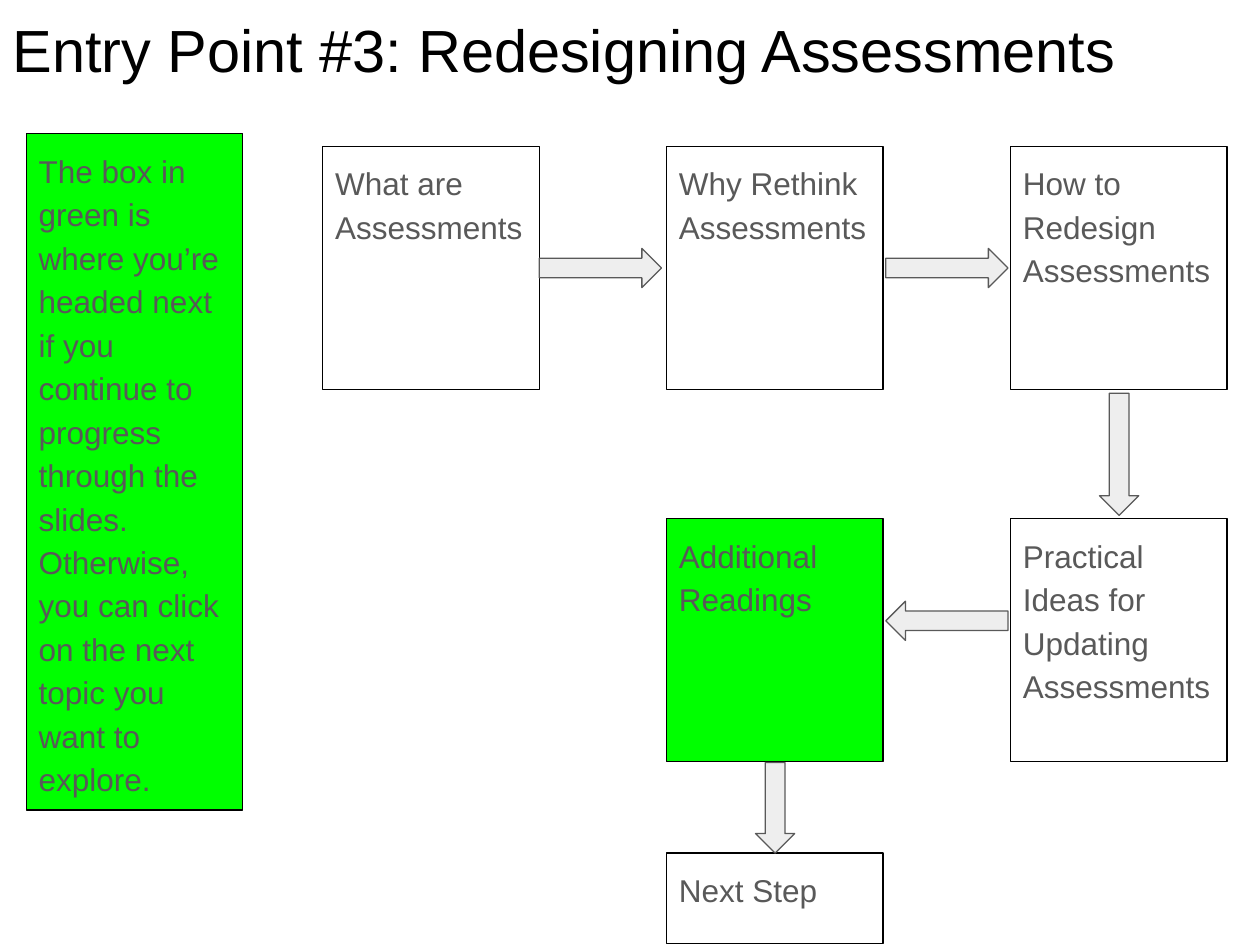
import pptx
import pptx.util
import pptx.dml.color
import pptx.enum.shapes
import pptx.enum.text

Pt = pptx.util.Pt
SHAPE = pptx.enum.shapes.MSO_SHAPE
COLORS = {"title": "000000", "border": "000000", "text": "595959",
          "next": "00FF00", "arrow": "EEEEEE", "arrow_edge": "595959"}

deck = pptx.Presentation()
deck.slide_width, deck.slide_height = Pt(720), Pt(540)
slide = deck.slides.add_slide(deck.slide_layouts[6])


def add_block(kind, left, top, width, height, fill, edge):
    block = slide.shapes.add_shape(kind, Pt(left), Pt(top), Pt(width), Pt(height))
    block.shadow.inherit = False
    if fill:
        block.fill.solid()
        block.fill.fore_color.rgb = pptx.dml.color.RGBColor.from_string(COLORS[fill])
    else:
        block.fill.background()
    block.line.color.rgb = pptx.dml.color.RGBColor.from_string(COLORS[edge])
    block.line.width = Pt(0.75)
    return block


def write(holder, text, size, color):
    frame = holder.text_frame
    frame.text = text
    frame.word_wrap = True
    frame.vertical_anchor = pptx.enum.text.MSO_ANCHOR.TOP
    frame.margin_left = frame.margin_right = Pt(7.2)
    frame.margin_top = frame.margin_bottom = Pt(7.2)
    paragraph = frame.paragraphs[0]
    paragraph.alignment = pptx.enum.text.PP_ALIGN.LEFT
    font = paragraph.runs[0].font
    font.name, font.size = "Arial", Pt(size)
    font.color.rgb = pptx.dml.color.RGBColor.from_string(COLORS[color])
    return paragraph


# Title
title = slide.shapes.add_textbox(Pt(0), Pt(0), Pt(702), Pt(55.4))
write(title, "Entry Point #3: Redesigning Assessments", 34, "title")

# Topic boxes on a three-column grid, with the green note at the left
box_width, box_height = 123.8, 139
columns = [184.4 + 196.5 * i for i in range(3)]
top_row, lower_row, last_row = 83.6, 296.4, 487.4
boxes = [
    ("What are Assessments", columns[0], top_row, box_height, None),
    ("Why Rethink Assessments", columns[1], top_row, box_height, None),
    ("How to Redesign Assessments", columns[2], top_row, box_height, None),
    ("Practical Ideas for Updating Assessments", columns[2], lower_row, box_height, None),
    ("Additional Readings", columns[1], lower_row, box_height, "next"),
    ("Next Step", columns[1], last_row, 51.8, None),
    ("The box in green is where you’re headed next if you continue to progress "
     "through the slides. Otherwise, you can click on the next topic you want to explore.",
     15, 76.4, 386.6, "next"),
]
for text, left, top, height, fill in boxes:
    box = add_block(SHAPE.RECTANGLE, left, top, box_width, height, fill, "border")
    paragraph = write(box, text, 18, "text")
    paragraph.line_spacing = 1.15
    paragraph.space_after = Pt(12)

# Arrows along the path; the downward ones are turned right arrows
arrow_height = 22.4
arrows = [
    (SHAPE.RIGHT_ARROW, 308.2, 142, 69.8, 0),
    (SHAPE.RIGHT_ARROW, 506.2, 142, 69.8, 0),
    (SHAPE.RIGHT_ARROW, 604.6, 248.4, 69.8, 90),
    (SHAPE.LEFT_ARROW, 506.2, 343.6, 69.8, 0),
    (SHAPE.RIGHT_ARROW, 417, 450.4, 51.8, 90),
]
for kind, left, top, length, turn in arrows:
    arrow = add_block(kind, left, top, length, arrow_height, "arrow", "arrow_edge")
    arrow.rotation = turn

deck.save("out.pptx")
